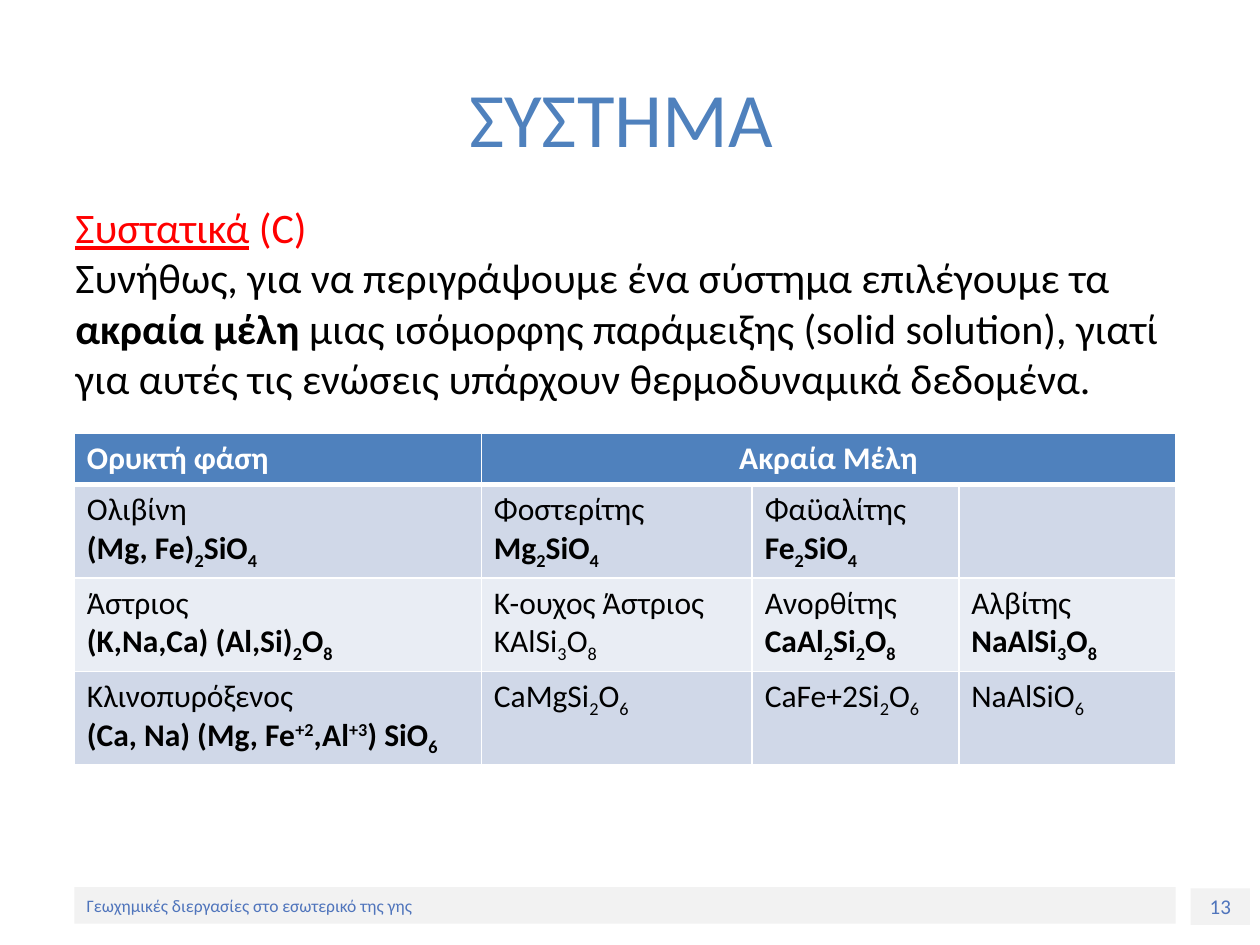
"""Build a slide on system components with a table of mineral end members."""
from lxml import etree
from pptx import Presentation, util as u
from pptx.dml.color import RGBColor
from pptx.enum import shapes, text
from pptx.oxml import ns

deck = Presentation()
deck.slide_width, deck.slide_height = u.Inches(10), u.Inches(7.5)
page = deck.slides.add_slide(deck.slide_layouts[6])
COL, ROW = deck.slide_width / 100, deck.slide_height / 100
BLUE, FOOTER_BLUE, WHITE, BLACK, RED = "4F81BD", "5075BC", "FFFFFF", "000000", "FF0000"
BANDS = [BLUE, "D0D8E8", "E9EDF4", "D0D8E8"]
BASELINES = {"_": "-25000", "^": "30000"}


def grid(left, top, width, height):
    return [round(n) for n in (left * COL, top * ROW, width * COL, height * ROW)]


def add_span(para, words, size, color, bold=False, underline=False):
    span = para.add_run()
    span.text = words.lstrip("_^")
    font = span.font
    font.name, font.size, font.bold, font.underline = "Calibri", u.Pt(size), bold, underline
    font.color.rgb = RGBColor.from_string(color)
    if words[0] in BASELINES:
        span._r.get_or_add_rPr().set("baseline", BASELINES[words[0]])


footers = [
    ("13", 12, text.PP_ALIGN.CENTER, (94.5, 94, 4.7, 3.87)),
    ("Γεωχημικές διεργασίες στο εσωτερικό της γης", 10, text.PP_ALIGN.LEFT, (5.9, 93.87, 87.4, 3.87)),
]
for words, size, align, place in footers:
    bar = page.shapes.add_shape(shapes.MSO_SHAPE.RECTANGLE, *grid(*place))
    bar.shadow.inherit = False
    bar.fill.solid()
    bar.fill.fore_color.rgb = RGBColor.from_string("F2F2F2")
    bar.line.fill.background()
    bar.text_frame.vertical_anchor = text.MSO_ANCHOR.MIDDLE
    para = bar.text_frame.paragraphs[0]
    para.alignment = align
    add_span(para, words, size, FOOTER_BLUE)

title = page.shapes.add_textbox(*grid(5, 4, 90, 16.67)).text_frame
title.word_wrap = True
title.vertical_anchor = text.MSO_ANCHOR.MIDDLE
title.paragraphs[0].alignment = text.PP_ALIGN.CENTER
add_span(title.paragraphs[0], "ΣΥΣΤΗΜΑ ", 44, BLUE)

body = page.shapes.add_textbox(*grid(5, 20.67, 90, 22.93)).text_frame
body.word_wrap = True
heading, para = body.paragraphs[0], body.add_paragraph()
add_span(heading, "Συστατικά", 24, RED, underline=True)
add_span(heading, " (C)", 24, RED)
add_span(para, "Συνήθως, για να περιγράψουμε ένα σύστημα επιλέγουμε τα ", 24, BLACK)
add_span(para, "ακραία μέλη ", 24, BLACK, bold=True)
add_span(para, "μιας ισόμορφης παράμειξης (solid solution), γιατί για αυτές τις ενώσεις "
         "υπάρχουν θερμοδυναμικά δεδομένα.", 24, BLACK)

minerals = [
    [["*Ορυκτή φάση"], ["*Ακραία Μέλη"], [], []],
    [["Ολιβίνη", "*(Mg, Fe)|_2|SiO|_4"], ["Φοστερίτης", "*Mg|_2|SiO|_4"],
     ["Φαϋαλίτης", "*Fe|_2|SiO|_4"], []],
    [["Άστριος", "*(K,Na,Ca) (Al,Si)|_2|O|_8"], ["Κ-ουχος Άστριος", "KAlSi|_3|O|_8"],
     ["Ανορθίτης", "*CaAl|_2|Si|_2|O|_8"], ["Αλβίτης", "*NaAlSi|_3|O|_8"]],
    [["Κλινοπυρόξενος", "*(Ca, Na) (Mg, Fe|^+2|,Al|^+3|) SiO|_6"], ["CaMgSi|_2|O|_6"],
     ["CaFe+2Si|_2|O|_6"], ["NaAlSiO|_6"]],
]
table = page.shapes.add_table(4, 4, *grid(5.9, 45.87, 87.4, 35)).table
for column, width in zip(table.columns, (32.3, 21.5, 16.4, 17.2)):
    column.width = round(width * COL)
for row, height in zip(table.rows, (5.4, 9.87, 9.87, 9.87)):
    row.height = round(height * ROW)
table.cell(0, 1).merge(table.cell(0, 3))

for r, (band, entries) in enumerate(zip(BANDS, minerals)):
    for c, lines in enumerate(entries):
        cell = table.cell(r, c)
        props = cell._tc.get_or_add_tcPr()
        for side in "LRTB":
            thick = (r, side) in [(0, "B"), (1, "T")]
            border = etree.SubElement(props, ns.qn(f"a:ln{side}"), w=str(u.Pt(3 if thick else 1)))
            paint = etree.SubElement(border, ns.qn("a:solidFill"))
            etree.SubElement(paint, ns.qn("a:srgbClr"), val=WHITE)
        cell.fill.solid()
        cell.fill.fore_color.rgb = RGBColor.from_string(band)
        for i, line in enumerate(lines):
            para = cell.text_frame.add_paragraph() if i else cell.text_frame.paragraphs[0]
            for part in line.lstrip("*").split("|"):
                add_span(para, part, 18, BLACK if r else WHITE, bold=line.startswith("*"))
table.cell(0, 1).text_frame.paragraphs[0].alignment = text.PP_ALIGN.CENTER

deck.save("out.pptx")
